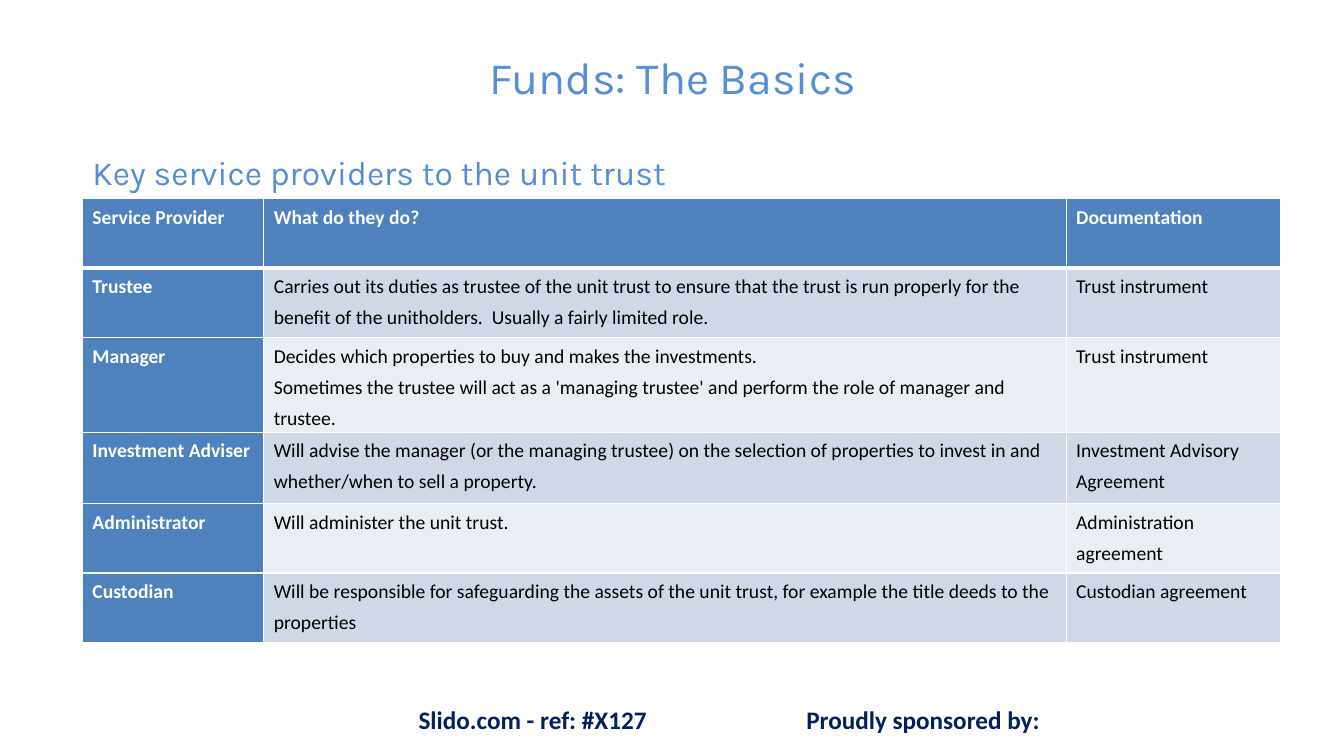
from dataclasses import dataclass
from typing import Any

from lxml import etree
from pptx import Presentation
from pptx import util as u
from pptx.dml.color import RGBColor
from pptx.enum import text
from pptx.oxml.ns import qn

SKY = RGBColor(0x55, 0x8E, 0xD5)
NAVY = RGBColor(0x00, 0x20, 0x60)
BLUE = RGBColor(0x4F, 0x81, 0xBD)
BAND_DARK = RGBColor(0xD0, 0xD8, 0xE8)
BAND_LIGHT = RGBColor(0xE9, 0xED, 0xF4)
WHITE = RGBColor(0xFF, 0xFF, 0xFF)
BLACK = RGBColor(0x00, 0x00, 0x00)

LEFT, CENTER, JUSTIFY = text.PP_ALIGN.LEFT, text.PP_ALIGN.CENTER, text.PP_ALIGN.JUSTIFY
COLUMN_WIDTHS = (4.57, 20.22, 5.41)


@dataclass(frozen=True)
class TextStyle:
    font: str
    size: float
    color: RGBColor
    bold: bool = False
    align: Any = LEFT


@dataclass(frozen=True)
class Caption:
    words: str
    left: float
    top: float
    width: float
    height: float
    style: TextStyle
    wrap: bool = True


@dataclass(frozen=True)
class Provider:
    height: float
    role: str
    duties: str
    document: str


HEADING = TextStyle("Karla", 32, SKY, align=CENTER)
SUBHEADING = TextStyle("Karla", 24, SKY)
FOOTER = TextStyle("Calibri", 18, NAVY, bold=True)
FOOTER_CENTERED = TextStyle("Calibri", 18, NAVY, bold=True, align=CENTER)
LABEL = TextStyle("Calibri", 14, WHITE, bold=True, align=JUSTIFY)
DETAIL = TextStyle("Calibri", 14, BLACK)

TITLE = Caption("Funds: The Basics", 2.03, 0.64, 29.85, 2.57, HEADING)
CAPTIONS = (
    Caption("Slido.com - ref: #X127", 8.08, 17.63, 10.69, 1.02, FOOTER_CENTERED),
    Caption("Proudly sponsored by:", 20.07, 17.63, 6.65, 1.02, FOOTER),
    Caption("Key service providers to the unit trust", 2.08, 3.71, 15.07, 1.27,
            SUBHEADING, wrap=False),
)
PROVIDERS = (
    Provider(1.75, "Service Provider", "What do they do?", "Documentation"),
    Provider(1.75, "Trustee",
             "Carries out its duties as trustee of the unit trust to ensure that the trust "
             "is run properly for the benefit of the unitholders.  Usually a fairly limited role.",
             "Trust instrument"),
    Provider(2.39, "Manager",
             "Decides which properties to buy and makes the investments.\n"
             "Sometimes the trustee will act as a 'managing trustee' and perform the role "
             "of manager and trustee.",
             "Trust instrument"),
    Provider(1.8, "Investment Adviser",
             "Will advise the manager (or the managing trustee) on the selection of properties "
             "to invest in and whether/when to sell a property.",
             "Investment Advisory Agreement"),
    Provider(1.75, "Administrator", "Will administer the unit trust.",
             "Administration agreement"),
    Provider(1.75, "Custodian",
             "Will be responsible for safeguarding the assets of the unit trust, for example "
             "the title deeds to the properties",
             "Custodian agreement"),
)


def apply(target: Any, values: dict[str, Any]) -> None:
    for name, value in values.items():
        setattr(target, name, value)


def write(frame: Any, words: str, style: TextStyle, spacing: dict[str, Any]) -> None:
    frame.text = words
    for paragraph in frame.paragraphs:
        apply(paragraph, {"alignment": style.align, **spacing})
        for run in paragraph.runs:
            apply(run.font, {"name": style.font, "size": u.Pt(style.size), "bold": style.bold})
            run.font.color.rgb = style.color


def place_caption(holder: Any, caption: Caption) -> None:
    apply(holder, {side: u.Cm(getattr(caption, side))
                   for side in ("left", "top", "width", "height")})
    apply(holder.text_frame, {"word_wrap": caption.wrap,
                              "auto_size": text.MSO_AUTO_SIZE.NONE})
    write(holder.text_frame, caption.words, caption.style, {})


def add_border(cell: Any, side: str, width: float) -> None:
    properties = cell._tc.get_or_add_tcPr()
    line = etree.SubElement(properties, qn(f"a:ln{side}"), w=str(u.Pt(width)))
    fill = etree.SubElement(line, qn("a:solidFill"))
    etree.SubElement(fill, qn("a:srgbClr"), val=str(WHITE))


def format_cell(cell: Any, words: str, row: int, column: int) -> None:
    is_header = row == 0
    is_label = is_header or column == 0
    thick_sides = {0: "B", 1: "T"}
    for side in "LRTB":
        add_border(cell, side, 3 if thick_sides.get(row) == side else 1)
    cell.fill.solid()
    cell.fill.fore_color.rgb = BLUE if is_label else BAND_DARK if row % 2 else BAND_LIGHT
    apply(cell, {"margin_left": u.Cm(0.25), "margin_right": u.Cm(0.25),
                 "margin_top": 0, "margin_bottom": 0})
    spacing = {"line_spacing": 1.3, "space_after": u.Pt(12 if is_header else 0)}
    write(cell.text_frame, words, LABEL if is_label else DETAIL, spacing)


def add_provider_table(slide: Any) -> None:
    table = slide.shapes.add_table(
        len(PROVIDERS), len(COLUMN_WIDTHS), u.Cm(2.08), u.Cm(5),
        u.Cm(sum(COLUMN_WIDTHS)), u.Cm(sum(p.height for p in PROVIDERS))).table
    for column, width in zip(table.columns, COLUMN_WIDTHS):
        column.width = u.Cm(width)
    for row, provider in enumerate(PROVIDERS):
        table.rows[row].height = u.Cm(provider.height)
        for column, words in enumerate((provider.role, provider.duties, provider.document)):
            format_cell(table.cell(row, column), words, row, column)


def main() -> None:
    deck = Presentation()
    apply(deck, {"slide_width": u.Cm(33.87), "slide_height": u.Cm(19.05)})
    slide = deck.slides.add_slide(deck.slide_layouts[5])
    slide.shapes.title.text_frame.vertical_anchor = text.MSO_ANCHOR.MIDDLE
    place_caption(slide.shapes.title, TITLE)
    for caption in CAPTIONS:
        place_caption(slide.shapes.add_textbox(0, 0, 0, 0), caption)
    add_provider_table(slide)
    deck.save("out.pptx")


if __name__ == "__main__":
    main()
